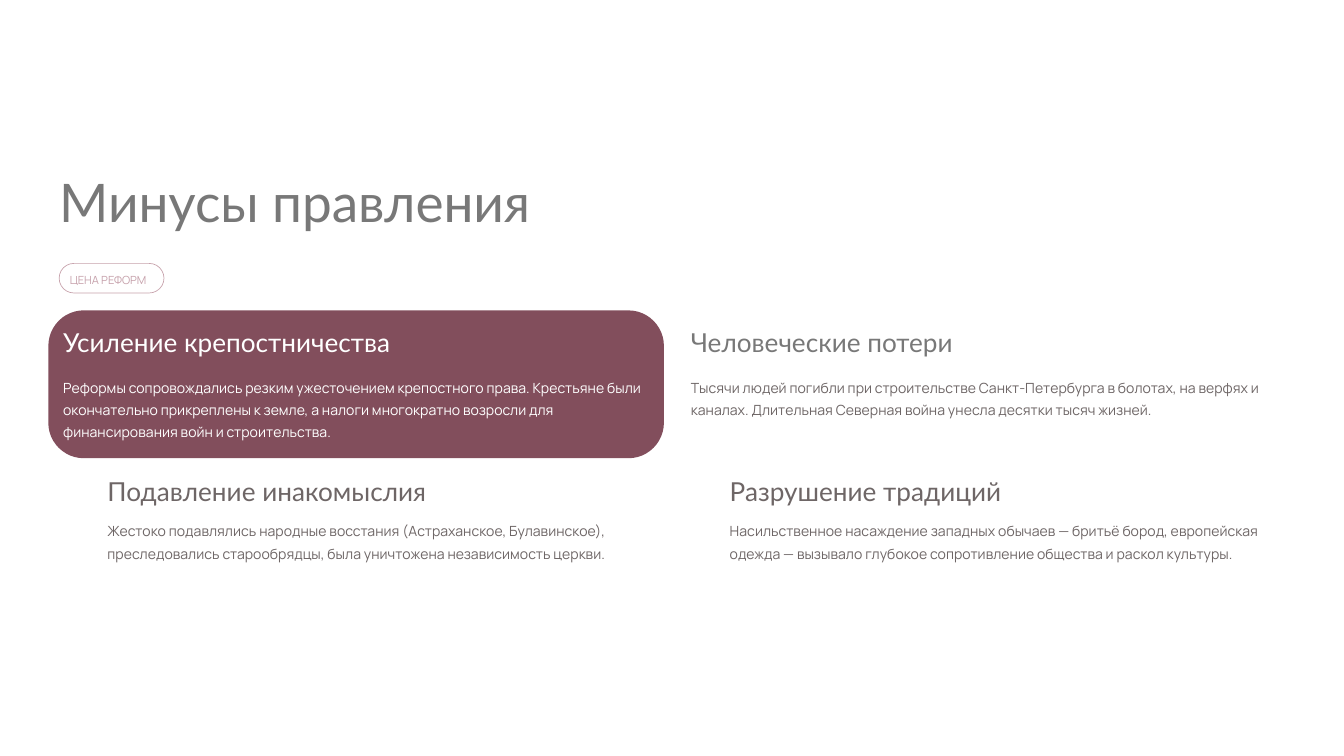
from pptx import Presentation, util as u
from pptx.dml.color import RGBColor
from pptx.enum import shapes, text

COLORS = {"title": "787878", "body": "6E6666", "accent": "824E5C",
          "tag": "C7A2AC", "light": "FFFFFF"}
TITLE = "Минусы правления"
TAG = "ЦЕНА РЕФОРМ"
# Each row: top, gap from heading to body, then its cards
# Each card: left, right, heading, heading colour, body, body colour
ROWS = [
    (2.42, 0.36, [
        (0.47, 4.83, "Усиление крепостничества", "light",
         "Реформы сопровождались резким ужесточением крепостного права. "
         "Крестьяне были окончательно прикреплены к земле, а налоги "
         "многократно возросли для финансирования войн и строительства.", "light"),
        (5.14, 9.56, "Человеческие потери", "title",
         "Тысячи людей погибли при строительстве Санкт-Петербурга в болотах, "
         "на верфях и каналах. Длительная Северная война унесла десятки тысяч "
         "жизней.", "body"),
    ]),
    (3.53, 0.32, [
        (0.8, 4.93, "Подавление инакомыслия", "body",
         "Жестоко подавлялись народные восстания (Астраханское, Булавинское), "
         "преследовались старообрядцы, была уничтожена независимость церкви.", "body"),
        (5.43, 9.56, "Разрушение традиций", "body",
         "Насильственное насаждение западных обычаев — бритьё бород, европейская "
         "одежда — вызывало глубокое сопротивление общества и раскол культуры.", "body"),
    ]),
]
STYLES = {
    "title": {"name": "Lato", "size": u.Pt(28.5), "spacing": 1.04},
    "heading": {"name": "Lato", "size": u.Pt(14), "spacing": 1.04},
    "body": {"name": "Manrope", "size": u.Pt(7.5), "spacing": 1.33},
    "tag": {"name": "Manrope", "size": u.Pt(6), "spacing": 1.33},
}
FRAME = {"margin_left": 0, "margin_top": 0, "margin_right": 0, "margin_bottom": 0,
         "auto_size": text.MSO_AUTO_SIZE.NONE,
         "vertical_anchor": text.MSO_ANCHOR.TOP}


def color(name):
    return RGBColor.from_string(COLORS[name])


def write(box, words, style, ink):
    frame = box.text_frame
    for name, value in FRAME.items():
        setattr(frame, name, value)
    frame.word_wrap = style == "body"
    para = frame.paragraphs[0]
    para.alignment = text.PP_ALIGN.LEFT
    para.line_spacing = STYLES[style]["spacing"]
    span = para.add_run()
    span.text = words
    for name in ("name", "size"):
        setattr(span.font, name, STYLES[style][name])
    span.font.color.rgb = color(ink)


def add_text(slide, area, words, style, ink):
    write(slide.shapes.add_textbox(*map(u.Inches, area)), words, style, ink)


def add_panel(slide, area, rounding, fill=None, line=None):
    panel = slide.shapes.add_shape(shapes.MSO_SHAPE.ROUNDED_RECTANGLE,
                                   *map(u.Inches, area))
    panel.shadow.inherit = False
    panel.adjustments[0] = rounding
    if fill:
        panel.fill.solid()
        panel.fill.fore_color.rgb = color(fill)
    else:
        panel.fill.background()
    if line:
        panel.line.color.rgb = color(line)
        panel.line.width = u.Pt(0.38)
    else:
        panel.line.fill.background()


def main():
    deck = Presentation()
    deck.slide_width = u.Inches(10)
    deck.slide_height = deck.slide_width * 9 // 16
    slide = deck.slides.add_slide(deck.slide_layouts[5])
    title = slide.shapes.title
    title.left, title.top, title.width, title.height = map(
        u.Inches, (0.44, 1.24, 4.49, 0.5))
    write(title, TITLE, "title", "title")

    add_panel(slide, (0.44, 1.96, 0.78, 0.22), 0.61, line="tag")
    add_text(slide, (0.52, 2, 1.13, 0.14), TAG, "tag", "tag")
    add_panel(slide, (0.36, 2.31, 4.58, 1.1), 0.24, fill="accent")

    for top, gap, cards in ROWS:
        for left, right, heading, heading_ink, body, body_ink in cards:
            width = right - left
            add_text(slide, (left, top, width, 0.25), heading, "heading", heading_ink)
            add_text(slide, (left, top + gap, width, 0.53), body, "body", body_ink)
    deck.save("out.pptx")


if __name__ == "__main__":
    main()
